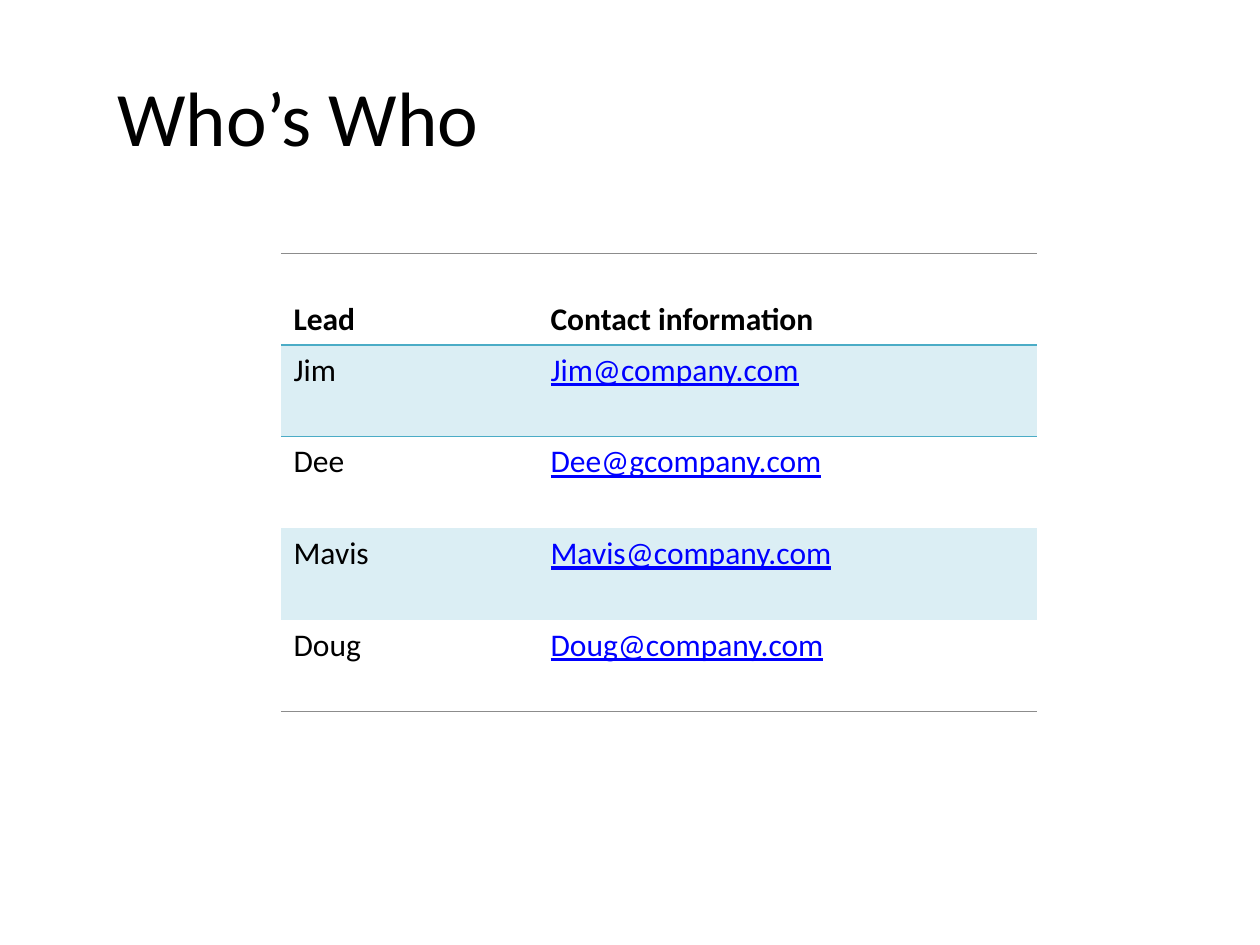
import lxml.etree
import pptx
import pptx.dml.color
import pptx.enum.text
import pptx.oxml.ns
import pptx.util

RGBColor = pptx.dml.color.RGBColor
BLACK = RGBColor(0x00, 0x00, 0x00)
LINK_BLUE = RGBColor(0x00, 0x00, 0xFF)
TEAL = RGBColor(0x4B, 0xAC, 0xC6)
PALE_TEAL = RGBColor(0xDB, 0xEE, 0xF4)
GREY = RGBColor(0x8C, 0x8C, 0x8C)

FONT = "Calibri"
PLAIN_TABLE_STYLE = "{2D5ABB26-0587-4C30-8999-92F81FD0307C}"
SLIDE_WIDTH, SLIDE_HEIGHT = pptx.util.Inches(10), pptx.util.Inches(7.5)
COLUMN_SHARES = (0.34, 0.66)

CONTACTS = [
    ("Lead", "Contact information"),
    ("Jim", "Jim@company.com"),
    ("Dee", "Dee@gcompany.com"),
    ("Mavis", "Mavis@company.com"),
    ("Doug", "Doug@company.com"),
]


def box_at(left, top, width, height):
    """Turn lengths in inches into a box."""
    return [pptx.util.Inches(length) for length in (left, top, width, height)]


def format_text(frame, size, color, bold=False, underline=False):
    for para in frame.paragraphs:
        for span in para.runs:
            span.font.name = FONT
            span.font.size = pptx.util.Pt(size)
            span.font.color.rgb = color
            span.font.bold = bold
            span.font.underline = underline


def add_border(cell, side, color, points):
    """Draw one cell edge; side is lnT or lnB."""
    qn = pptx.oxml.ns.qn
    properties = cell._tc.get_or_add_tcPr()
    line = lxml.etree.SubElement(properties, qn("a:" + side), w=str(pptx.util.Pt(points)))
    fill = lxml.etree.SubElement(line, qn("a:solidFill"))
    lxml.etree.SubElement(fill, qn("a:srgbClr"), val=str(color))


def place_title(page, box):
    title = page.shapes.title
    title.left, title.top, title.width, title.height = box
    frame = title.text_frame
    frame.text = "Who’s Who"
    frame.vertical_anchor = pptx.enum.text.MSO_ANCHOR.MIDDLE
    frame.paragraphs[0].alignment = pptx.enum.text.PP_ALIGN.LEFT
    format_text(frame, 44, BLACK)


def place_contacts(page, box):
    frame = page.shapes.add_table(len(CONTACTS), len(COLUMN_SHARES), *box)
    table = frame.table
    table.horz_banding = False
    style = table._tbl.tblPr.find(pptx.oxml.ns.qn("a:tableStyleId"))
    style.text = PLAIN_TABLE_STYLE
    for column, share in zip(table.columns, COLUMN_SHARES):
        column.width = int(box[2] * share)

    last = len(CONTACTS) - 1
    for row, contact in enumerate(CONTACTS):
        header = row == 0
        for column, text in enumerate(contact):
            cell = table.cell(row, column)
            cell.text = text
            link = column == 1 and not header
            format_text(cell.text_frame, 18, LINK_BLUE if link else BLACK,
                        bold=header, underline=link)
            # Rules above and below the table, and under the header
            if header:
                cell.vertical_anchor = pptx.enum.text.MSO_ANCHOR.BOTTOM
                add_border(cell, "lnT", GREY, 0.5)
                add_border(cell, "lnB", TEAL, 1)
            elif row == 1:
                add_border(cell, "lnT", TEAL, 1)
            elif row == last:
                add_border(cell, "lnB", GREY, 0.5)
            # Bands on odd rows
            if row % 2:
                cell.fill.solid()
                cell.fill.fore_color.rgb = PALE_TEAL
            else:
                cell.fill.background()


def main():
    deck = pptx.Presentation()
    deck.slide_width, deck.slide_height = SLIDE_WIDTH, SLIDE_HEIGHT
    page = deck.slides.add_slide(deck.slide_layouts[5])
    place_title(page, box_at(0.83, 0.29, 8.83, 1.25))
    place_contacts(page, box_at(2.23, 2.01, 6, 3.64))
    deck.save("out.pptx")


if __name__ == "__main__":
    main()
